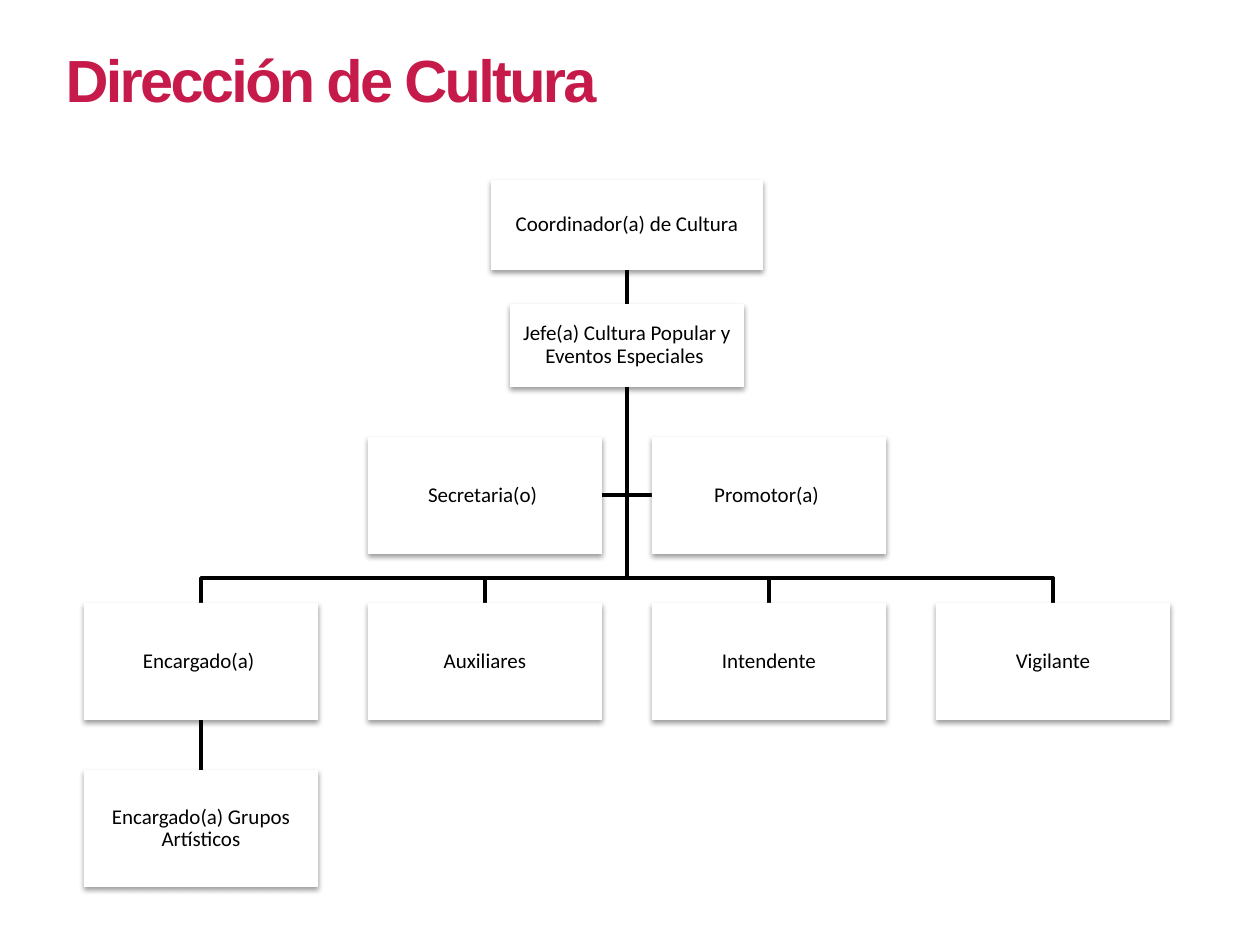
from dataclasses import dataclass

import pptx
import pptx.dml.color
import pptx.enum.shapes
import pptx.enum.text
import pptx.oxml
import pptx.oxml.ns
import pptx.util

PX = 914400 // 126
COLORS = {"title": "C51A4A", "ink": "000000", "box": "FFFFFF"}
A_NS = pptx.oxml.ns.nsdecls("a")


@dataclass
class Post:
    label: str
    x: int
    y: int
    width: int = 234
    height: int = 117

    @property
    def center(self) -> int:
        return self.x + self.width // 2

    @property
    def bottom(self) -> int:
        return self.y + self.height


def px(length: int) -> int:
    return length * PX


def rgb(name: str) -> pptx.dml.color.RGBColor:
    return pptx.dml.color.RGBColor.from_string(COLORS[name])


def style_line(line) -> None:
    line.color.rgb = rgb("ink")
    line.width = pptx.util.Pt(2)


def draw_post(slide, post: Post):
    box = slide.shapes.add_shape(
        pptx.enum.shapes.MSO_SHAPE.RECTANGLE,
        px(post.x), px(post.y), px(post.width), px(post.height))
    box.fill.solid()
    box.fill.fore_color.rgb = rgb("box")
    box.line.fill.background()

    # Soft shadow straight below the box
    box.shadow.inherit = False
    effects = box._element.spPr.find(pptx.oxml.ns.qn("a:effectLst"))
    effects.append(pptx.oxml.parse_xml(
        f'<a:outerShdw {A_NS} blurRad="40000" dist="20000" dir="5400000" rotWithShape="0">'
        f'<a:srgbClr val="{COLORS["ink"]}"><a:alpha val="38000"/></a:srgbClr></a:outerShdw>'))

    frame = box.text_frame
    frame.word_wrap = True
    frame.vertical_anchor = pptx.enum.text.MSO_ANCHOR.MIDDLE
    frame.margin_left = frame.margin_right = px(1)
    frame.margin_top = frame.margin_bottom = px(1)
    label = frame.paragraphs[0]
    label.text = post.label
    label.alignment = pptx.enum.text.PP_ALIGN.CENTER
    label.line_spacing = 0.9
    label.font.name = "Calibri"
    label.font.size = pptx.util.Pt(12)
    label.font.color.rgb = rgb("ink")
    return box


def draw_branch(slide, points: list[tuple[int, int]]) -> None:
    builder = slide.shapes.build_freeform(*points[0], scale=PX)
    builder.add_line_segments(points[1:], close=False)
    branch = builder.convert_to_shape()
    branch.fill.background()
    style_line(branch.line)
    branch.shadow.inherit = False


def join_posts(slide, upper, lower) -> None:
    link = slide.shapes.add_connector(
        pptx.enum.shapes.MSO_CONNECTOR.STRAIGHT, 0, 0, 0, 0)
    link.begin_connect(upper, 2)
    link.end_connect(lower, 0)
    style_line(link.line)
    link._element.spPr.append(pptx.oxml.parse_xml(f"<a:effectLst {A_NS}/>"))


def draw_title(slide) -> None:
    title = slide.shapes.title
    title.left, title.top, title.width, title.height = map(px, (53, 37, 858, 87))
    frame = title.text_frame
    frame.word_wrap = True
    frame.vertical_anchor = pptx.enum.text.MSO_ANCHOR.TOP
    heading = frame.paragraphs[0]
    heading.text = "Dirección de Cultura"
    heading.alignment = pptx.enum.text.PP_ALIGN.LEFT
    heading.font.name = "Arial"
    heading.font.size = pptx.util.Pt(34)
    heading.font.bold = True
    heading.font.color.rgb = rgb("title")
    heading.runs[0]._r.get_or_add_rPr().set("spc", "-150")


def main() -> None:
    deck = pptx.Presentation()
    deck.slide_width, deck.slide_height = pptx.util.Inches(10), pptx.util.Inches(7.5)
    slide = deck.slides.add_slide(deck.slide_layouts[5])
    draw_title(slide)

    # Posts, on four equal columns
    columns = [84 + 284 * i for i in range(4)]
    coordinator = Post("Coordinador(a) de Cultura", 491, 180, 272, 90)
    chief = Post("Jefe(a) Cultura Popular y Eventos Especiales ", 510, 304, 234, 83)
    assistants = [Post(label, x, 437) for label, x in
                  zip(("Secretaria(o) ", "Promotor(a) "), columns[1:3])]
    staff = [Post(label, x, 603) for label, x in
             zip(("Encargado(a) ", "Auxiliares", "Intendente", "Vigilante"), columns)]
    groups = Post("Encargado(a) Grupos Artísticos", columns[0], 770)

    # Branches from the chief, behind the boxes
    start = (chief.center, chief.bottom)
    for post in assistants:
        side = post.x if post.x > chief.center else post.x + post.width
        middle = post.y + post.height // 2
        draw_branch(slide, [start, (chief.center, middle), (side, middle)])
    rail = 578
    for post in staff:
        draw_branch(slide, [start, (chief.center, rail),
                            (post.center, rail), (post.center, post.y)])

    # Boxes and the straight links between them
    coordinator_box, chief_box, manager_box, groups_box = (
        draw_post(slide, post) for post in (coordinator, chief, staff[0], groups))
    for post in staff[1:] + assistants:
        draw_post(slide, post)
    join_posts(slide, coordinator_box, chief_box)
    join_posts(slide, manager_box, groups_box)

    deck.save("out.pptx")


if __name__ == "__main__":
    main()
